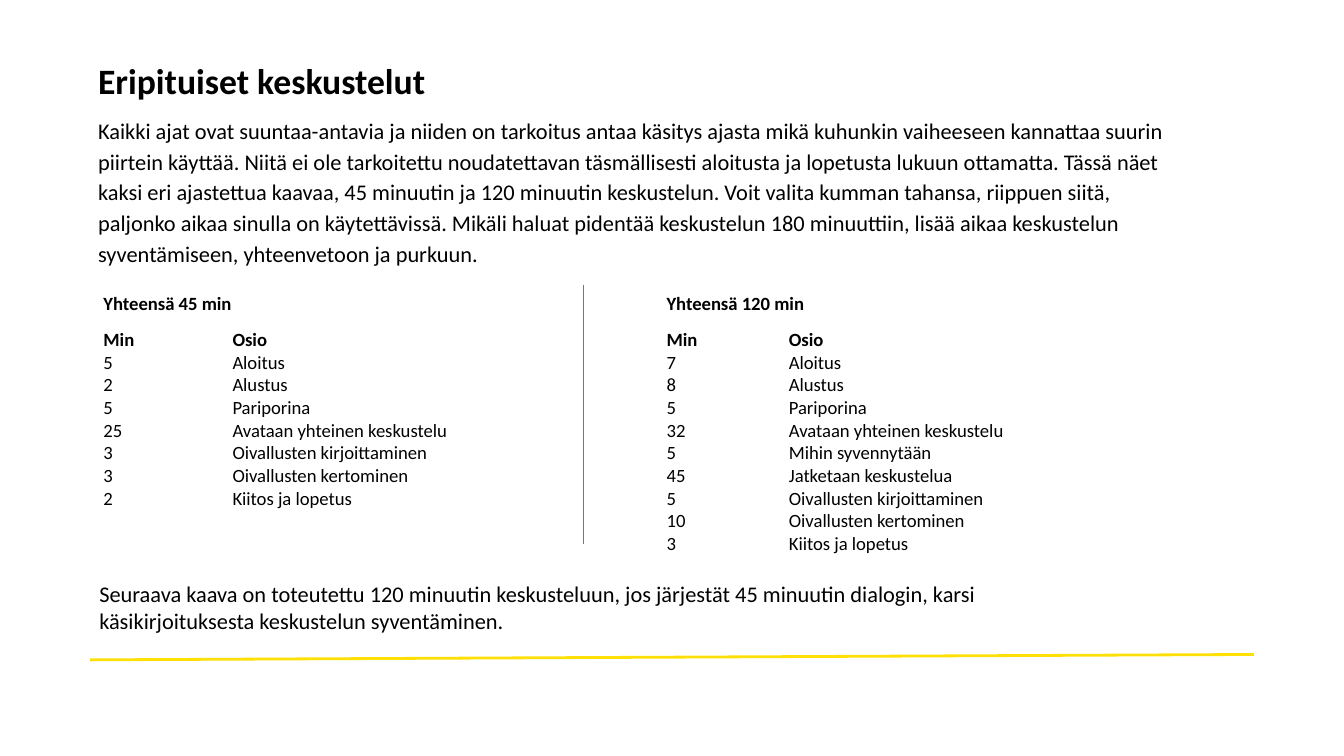
from copy import deepcopy
from dataclasses import dataclass

from lxml import etree
from pptx import Presentation
from pptx.dml.color import RGBColor
from pptx.enum.shapes import MSO_CONNECTOR
from pptx.enum.text import MSO_AUTO_SIZE
from pptx.oxml.ns import qn
from pptx.util import Inches, Pt

LINE = MSO_CONNECTOR.STRAIGHT
GROW = MSO_AUTO_SIZE.SHAPE_TO_FIT_TEXT

TITLE = "Eripituiset keskustelut"
INTRO = (
    "Kaikki ajat ovat suuntaa-antavia ja niiden on tarkoitus antaa käsitys ajasta "
    "mikä kuhunkin vaiheeseen kannattaa suurin piirtein käyttää. Niitä ei ole "
    "tarkoitettu noudatettavan täsmällisesti aloitusta ja lopetusta lukuun ottamatta. "
    "Tässä näet kaksi eri ajastettua kaavaa, 45 minuutin ja 120 minuutin keskustelun. "
    "Voit valita kumman tahansa, riippuen siitä, paljonko aikaa sinulla on "
    "käytettävissä. Mikäli haluat pidentää keskustelun 180 minuuttiin, lisää aikaa "
    "keskustelun syventämiseen, yhteenvetoon ja purkuun."
)
CLOSING = (
    "Seuraava kaava on toteutettu 120 minuutin keskusteluun, jos järjestät 45 minuutin "
    "dialogin, karsi käsikirjoituksesta keskustelun syventäminen."
)
START = "Aloitus\vAlustus\vPariporina"
OPEN = "Avataan yhteinen keskustelu"
WRITE = "Oivallusten kirjoittaminen"
FINISH = ["Oivallusten kertominen", "Kiitos ja lopetus"]
PLANS = [
    ("Yhteensä 45 min", (5, 2, 5, 25, 3, 3, 2),
     [START, f"{OPEN}\v{WRITE}"] + FINISH),
    ("Yhteensä 120 min", (7, 8, 5, 32, 5, 45, 5, 10, 3),
     [START, OPEN, f"Mihin syvennytään\vJatketaan keskustelua\v{WRITE}"] + FINISH),
]


@dataclass(frozen=True)
class Theme:
    font: str = "Calibri"
    ink: str = "000000"
    accent: str = "FFE006"
    rule: str = "4B7EBC"
    title: float = 19.1
    body: float = 12
    small: float = 10


class Deck:
    """Draws styled elements on the current slide."""

    def __init__(self, theme, slide):
        self.theme = theme
        self.slide = slide

    def style(self, para, size, bold=False):
        for run in para.runs:
            font = run.font
            font.name = self.theme.font
            font.size = Pt(size)
            font.bold = bold
            font.color.rgb = RGBColor.from_string(self.theme.ink)
        for gap in para._p.findall(qn("a:br")):
            gap.insert(0, deepcopy(para.runs[0]._r.rPr))

    def text(self, box, lines):
        frame = self.slide.shapes.add_textbox(*map(Inches, box)).text_frame
        frame.word_wrap = True
        frame.auto_size = GROW
        frame.text = "\n".join(words for words, _, _ in lines)
        for para, (_, size, bold) in zip(frame.paragraphs, lines):
            self.style(para, size, bold)
        return frame

    def line(self, start, end, color, width):
        line = self.slide.shapes.add_connector(LINE, *map(Inches, start + end))
        line.line.color.rgb = RGBColor.from_string(color)
        line.line.width = Pt(width)
        etree.SubElement(line._element.spPr, qn("a:effectLst"))

    def cell(self, cell, lines):
        cell.text_frame.text = "\n".join(lines)
        for index, para in enumerate(cell.text_frame.paragraphs):
            self.style(para, self.theme.small, index == 0)

    def table(self, box, widths, heights, plans):
        shape = self.slide.shapes.add_table(
            len(heights), len(widths), *map(Inches, box))
        table = shape.table
        table.first_row = table.horz_banding = False
        for column, width in zip(table.columns, widths):
            column.width = Inches(width)
        for row, height in zip(table.rows, heights):
            row.height = Inches(height)
        for cell in table.iter_cells():
            cell.fill.background()
        for index, (name, mins, parts) in enumerate(plans):
            left = 2 * index
            head = table.cell(0, left)
            head.merge(table.cell(0, left + 1))
            self.cell(head, [name])
            self.cell(table.cell(1, left), ["Min", *map(str, mins)])
            self.cell(table.cell(1, left + 1), ["Osio", *parts])


def main():
    show = Presentation()
    show.slide_width = Inches(10)
    show.slide_height = show.slide_width * 9 // 16
    theme = Theme()
    deck = Deck(theme, show.slides.add_slide(show.slide_layouts[6]))

    intro = deck.text((0.67, 0.36, 8.22, 1.67), [
        (TITLE, theme.title, True), (INTRO, theme.body, False)])
    intro.margin_left = intro.margin_right = Inches(0.06)
    intro.margin_top = intro.margin_bottom = Inches(0.03)
    for para in intro.paragraphs:
        para.line_spacing = 1.15
    intro.paragraphs[0].space_after = Pt(6)

    deck.line((0.67, 4.91), (9.33, 4.87), theme.accent, 1.5)
    deck.table((0.67, 2.13, 8.05, 2.11), (0.96, 3.23, 0.91, 2.95), (0.25, 1.86), PLANS)
    deck.line((4.34, 2.12), (4.34, 4.05), theme.rule, 0.75)
    deck.text((0.64, 4.27, 7.89, 0.5), [(CLOSING, theme.body, False)])
    show.save("out.pptx")


if __name__ == "__main__":
    main()
